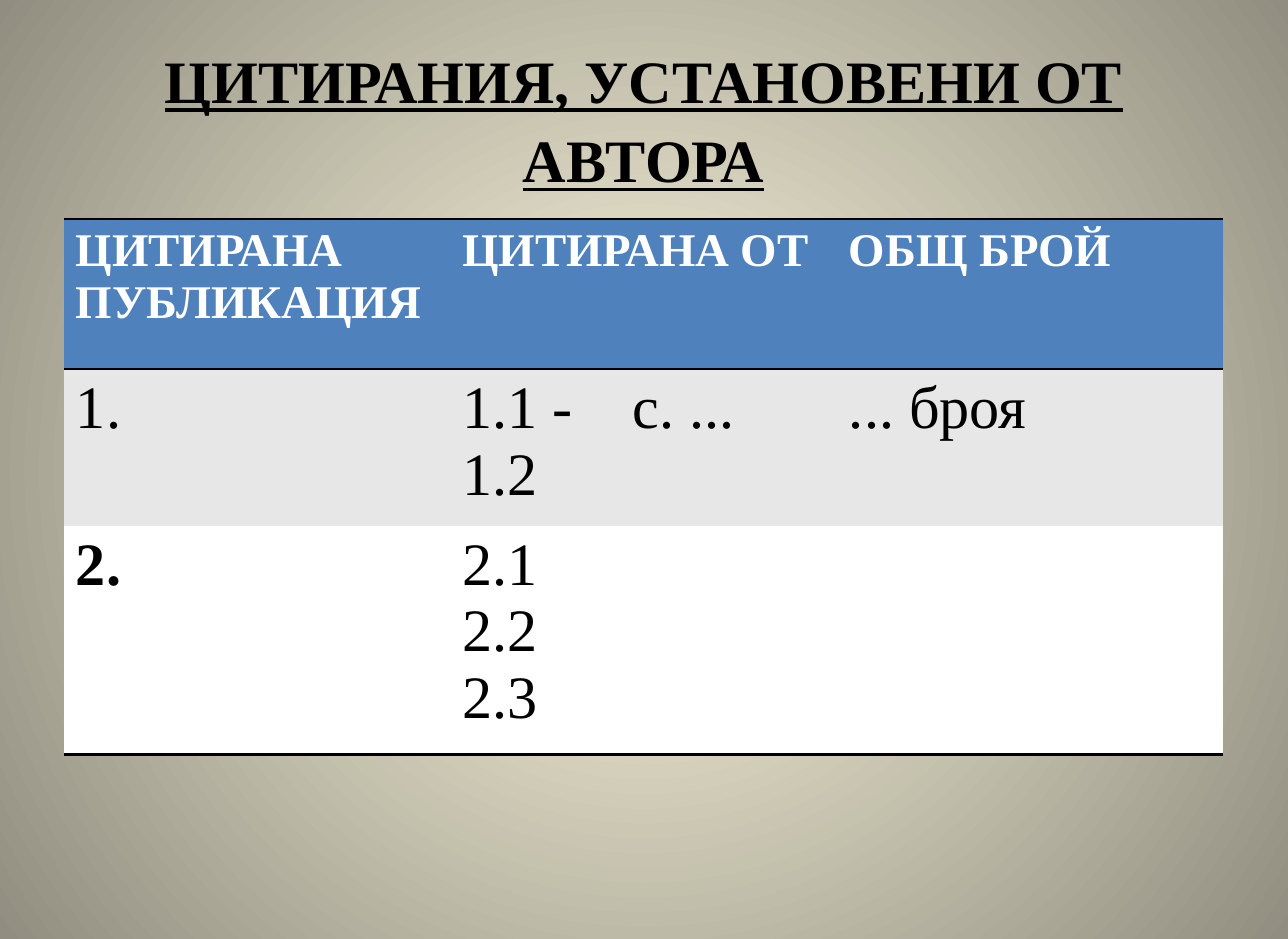
from lxml.etree import SubElement
from pptx import Presentation
from pptx.dml.color import RGBColor
from pptx.enum.text import MSO_ANCHOR, PP_ALIGN
from pptx.oxml import parse_xml
from pptx.oxml.ns import nsdecls, qn
from pptx.util import Pt

FONT = "Times New Roman"
COLORS = {"text": "000000", "header_text": "FFFFFF", "header": "4F81BD",
          "odd": "E7E7E7", "even": "FFFFFF", "rule": "000000",
          "glow": "FCF7DD", "edge": "918E81"}
LEFT, WIDTH = 38.2, 693.6
ROW_HEIGHTS = [89.7, 87.3, 126.2]
TAB_STOP = 101.7
HEADER = ["ЦИТИРАНА ПУБЛИКАЦИЯ", "ЦИТИРАНА ОТ", "ОБЩ БРОЙ"]
CITATIONS = [
    [["1."], ["1.1 -\tс. ...", "1.2"], ["... броя"]],
    [["2."], ["2.1", "2.2", "2.3"], []],
]


def add_run(p, text, size, color, bold=False, underline=False):
    r = p.add_run()
    r.text = text
    r.font.name = FONT
    r.font.size = Pt(size)
    r.font.bold = bold
    r.font.underline = underline
    r.font.color.rgb = RGBColor.from_string(COLORS[color])


def set_background(s):
    """Radial glow from the centre of the slide."""
    stops = "".join(
        f'<a:gs pos="{pos}"><a:srgbClr val="{COLORS[name]}"/></a:gs>'
        for pos, name in ((0, "glow"), (100000, "edge")))
    bg = parse_xml(
        f'<p:bg {nsdecls("p", "a")}><p:bgPr><a:gradFill rotWithShape="1">'
        f'<a:gsLst>{stops}</a:gsLst><a:path path="circle">'
        '<a:fillToRect l="50000" t="50000" r="50000" b="50000"/></a:path>'
        '</a:gradFill><a:effectLst/></p:bgPr></p:bg>')
    s.element.cSld.insert(0, bg)


def add_title(s, x, y, w, h):
    tf = s.shapes.add_textbox(Pt(x), Pt(y), Pt(w), Pt(h)).text_frame
    tf.word_wrap = True
    tf.vertical_anchor = MSO_ANCHOR.MIDDLE
    p = tf.paragraphs[0]
    p.alignment = PP_ALIGN.CENTER
    p.line_spacing = 1.1
    add_run(p, "ЦИТИРАНИЯ, УСТАНОВЕНИ ОТ АВТОРА", 36, "text", True, True)


def set_borders(cell, ruled):
    """Rule the given sides of a cell and leave the others without a line."""
    tc_pr = cell._tc.get_or_add_tcPr()
    for side in "LRTB":
        ln = SubElement(tc_pr, qn(f"a:ln{side}"), w=str(Pt(2)))
        if side in ruled:
            fill = SubElement(ln, qn("a:solidFill"))
            SubElement(fill, qn("a:srgbClr"), val=COLORS["rule"])
        else:
            SubElement(ln, qn("a:noFill"))


def fill_cell(cell, lines, size, color, bold, fill, ruled):
    set_borders(cell, ruled)
    cell.fill.solid()
    cell.fill.fore_color.rgb = RGBColor.from_string(COLORS[fill])
    tf = cell.text_frame
    for i, line in enumerate(lines):
        p = tf.add_paragraph() if i else tf.paragraphs[0]
        if "\t" in line:
            tabs = SubElement(p._p.get_or_add_pPr(), qn("a:tabLst"))
            SubElement(tabs, qn("a:tab"), pos=str(Pt(TAB_STOP)), algn="l")
        add_run(p, line, size, color, bold)


def add_citation_table(s, x, y, w):
    table = s.shapes.add_table(len(ROW_HEIGHTS), len(HEADER), Pt(x), Pt(y),
                               Pt(w), Pt(sum(ROW_HEIGHTS))).table
    table.horz_banding = False
    for column in table.columns:
        column.width = Pt(w / len(HEADER))
    for row, height in zip(table.rows, ROW_HEIGHTS):
        row.height = Pt(height)
    # Header row
    for c, label in enumerate(HEADER):
        fill_cell(table.cell(0, c), [label], 28, "header_text", True,
                  "header", "TB")
    # Citation rows
    for r, row in enumerate(CITATIONS, 1):
        ruled = ("T" if r == 1 else "") + ("B" if r == len(CITATIONS) else "")
        for c, lines in enumerate(row):
            fill_cell(table.cell(r, c), lines, 36, "text", lines == ["2."],
                      "odd" if r % 2 else "even", ruled)


def main():
    prs = Presentation()
    prs.slide_width, prs.slide_height = Pt(770.4), Pt(561.6)
    s = prs.slides.add_slide(prs.slide_layouts[6])
    set_background(s)
    add_title(s, LEFT, 22.3, WIDTH, 93.6)
    add_citation_table(s, LEFT, 131, WIDTH)
    prs.save("out.pptx")


if __name__ == "__main__":
    main()
